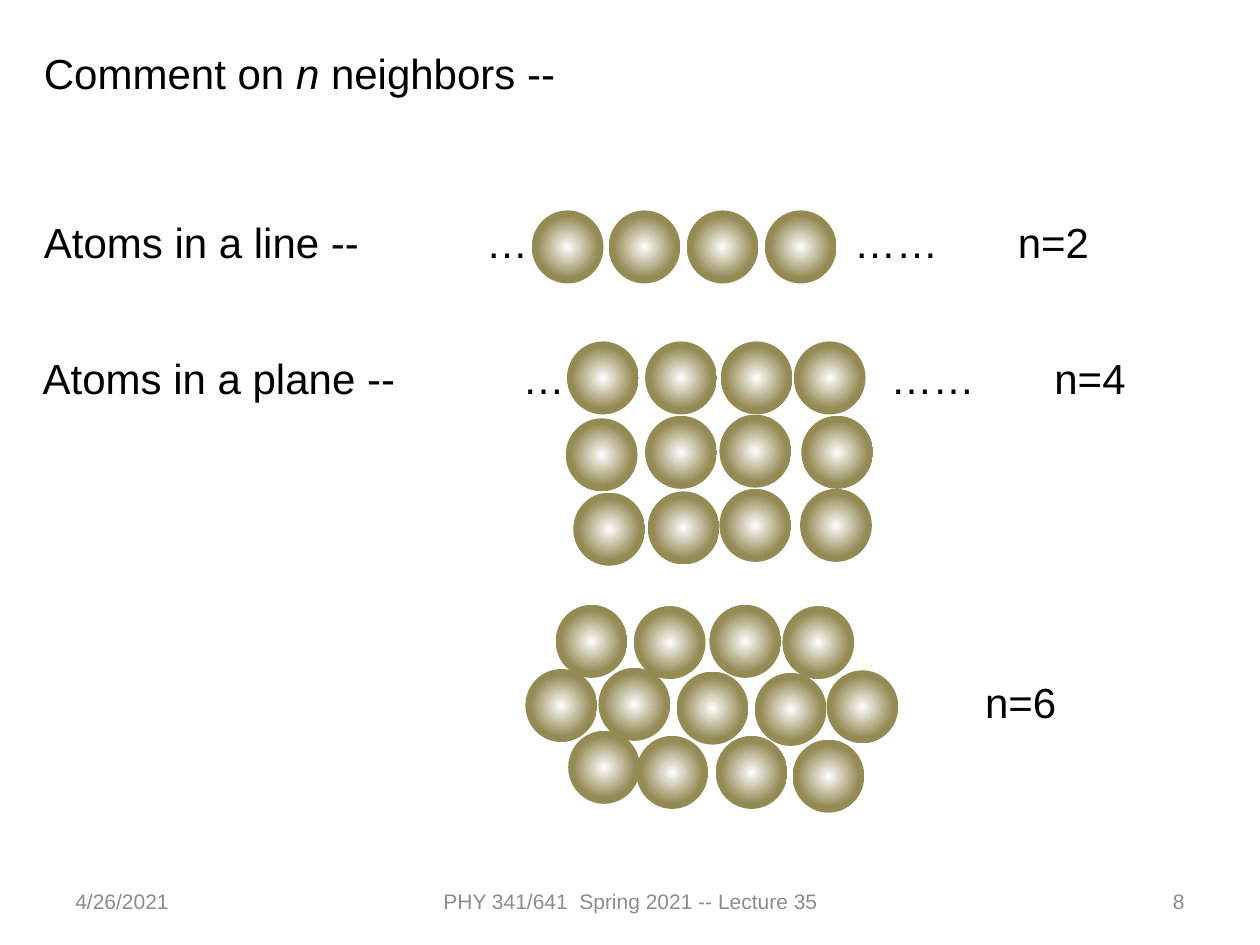
from dataclasses import dataclass

from lxml import etree
from pptx import Presentation
from pptx.dml.color import RGBColor
from pptx.enum.shapes import MSO_SHAPE
from pptx.enum.text import MSO_ANCHOR, MSO_AUTO_SIZE, PP_ALIGN
from pptx.oxml.ns import qn
from pptx.util import Inches, Pt

ELLIPSE = MSO_SHAPE.OVAL
TOP, MIDDLE = MSO_ANCHOR.TOP, MSO_ANCHOR.MIDDLE
GROW = MSO_AUTO_SIZE.SHAPE_TO_FIT_TEXT
LEFT, CENTER, RIGHT = PP_ALIGN.LEFT, PP_ALIGN.CENTER, PP_ALIGN.RIGHT


@dataclass(frozen=True)
class Theme:
    font: str = "Arial"
    body_size: int = 24
    footer_size: int = 12
    ink: RGBColor = RGBColor(0x00, 0x00, 0x00)
    muted: RGBColor = RGBColor(0x8C, 0x8C, 0x8C)
    atom_core: RGBColor = RGBColor(0xFF, 0xFF, 0xFF)
    atom_rim: RGBColor = RGBColor(0x94, 0x8A, 0x54)
    rim_start: float = 0.61


THEME = Theme()
ATOM_WIDTH, ATOM_HEIGHT = 0.57, 0.58
BODY_WIDTH, BODY_HEIGHT = 9.08, 0.5
FOOTER_TOP, FOOTER_HEIGHT = 6.95, 0.4

# Text spans: (words, italic)
HEADING = [("Comment on ", False), ("n", True), (" neighbors --", False)]

# Labelled lattices: left, top, cells, tab stop of the second cell
LATTICE_LABELS = [
    (0.25, 1.67, ["Atoms in a line --", "…", "……", "n=2"], 3.51),
    (0.24, 2.75, ["Atoms in a plane --", "…", "……", "n=4"], 3.81),
]
TAB_OFFSETS = [0, 2.92, 4.22]  # first dots, second dots, neighbor count

# Footer: left, width, alignment, words
FOOTER = [
    (0.5, 2.33, LEFT, "4/26/2021"),
    (3.42, 3.17, CENTER, "PHY 341/641  Spring 2021 -- Lecture 35"),
    (7.17, 2.33, RIGHT, "8"),
]

# Hand-placed atoms, one list of (left, top) per row
ATOM_ROWS = {
    "line": [
        [(4.22, 1.67), (4.83, 1.67), (5.45, 1.67), (6.07, 1.67)],
    ],
    "square plane": [
        [(4.5, 2.71), (5.12, 2.71), (5.72, 2.71), (6.3, 2.71)],
        [(4.49, 3.32), (5.12, 3.3), (5.71, 3.29), (6.36, 3.3)],
        [(4.55, 3.91), (5.14, 3.9), (5.71, 3.88), (6.35, 3.88)],
    ],
    "hexagonal plane": [
        [(4.41, 4.8), (5.03, 4.81), (5.63, 4.8), (6.21, 4.81)],
        [(4.17, 5.31), (4.75, 5.3), (5.37, 5.33), (5.99, 5.34), (6.56, 5.32)],
        [(4.51, 5.8), (5.05, 5.84), (5.68, 5.84), (6.29, 5.87)],
    ],
}


def add_text(page, area, spans, size=THEME.body_size, color=THEME.ink,
             align=LEFT, anchor=TOP, tabs=()):
    box = page.shapes.add_textbox(*map(Inches, area))
    frame = box.text_frame
    frame.word_wrap = True
    frame.vertical_anchor = anchor
    if anchor == TOP:
        frame.auto_size = GROW
    para = frame.paragraphs[0]
    para.alignment = align
    if tabs:
        tab_list = etree.SubElement(para._p.get_or_add_pPr(), qn("a:tabLst"))
        for stop in tabs:
            etree.SubElement(tab_list, qn("a:tab"), pos=str(Inches(stop)), algn="l")
    para.font.name = THEME.font
    para.font.size = Pt(size)
    para.font.color.rgb = color
    for words, italic in spans:
        span = para.add_run()
        span.text = words
        if italic:
            span.font.italic = True


def add_atom(page, left, top):
    """Draw a ball shaded radially from a light core to a dark rim."""
    atom = page.shapes.add_shape(
        ELLIPSE, *map(Inches, (left, top, ATOM_WIDTH, ATOM_HEIGHT)))
    atom.shadow.inherit = False
    atom.line.fill.background()
    atom.fill.gradient()
    core, rim = atom.fill.gradient_stops
    core.position, core.color.rgb = 0, THEME.atom_core
    rim.position, rim.color.rgb = THEME.rim_start, THEME.atom_rim
    gradient = atom._element.spPr.find(qn("a:gradFill"))
    linear = gradient.find(qn("a:lin"))
    radial = etree.Element(qn("a:path"), path="circle")
    etree.SubElement(radial, qn("a:fillToRect"),
                     {side: "50000" for side in "ltrb"})
    gradient.replace(linear, radial)


def main():
    deck = Presentation()
    deck.slide_width, deck.slide_height = Inches(10), Inches(7.5)
    page = deck.slides.add_slide(deck.slide_layouts[6])

    for left, width, align, words in FOOTER:
        add_text(page, (left, FOOTER_TOP, width, FOOTER_HEIGHT), [(words, False)],
                 THEME.footer_size, THEME.muted, align, MIDDLE)

    add_text(page, (0.25, 0.33, BODY_WIDTH, BODY_HEIGHT), HEADING)
    for left, top, cells, first_tab in LATTICE_LABELS:
        add_text(page, (left, top, BODY_WIDTH, BODY_HEIGHT),
                 [("\t".join(cells), False)],
                 tabs=[first_tab + offset for offset in TAB_OFFSETS])
    add_text(page, (7.72, 5.32, 1.14, BODY_HEIGHT), [("n=6", False)])

    for rows in ATOM_ROWS.values():
        for row in rows:
            for left, top in row:
                add_atom(page, left, top)

    deck.save("out.pptx")


if __name__ == "__main__":
    main()
